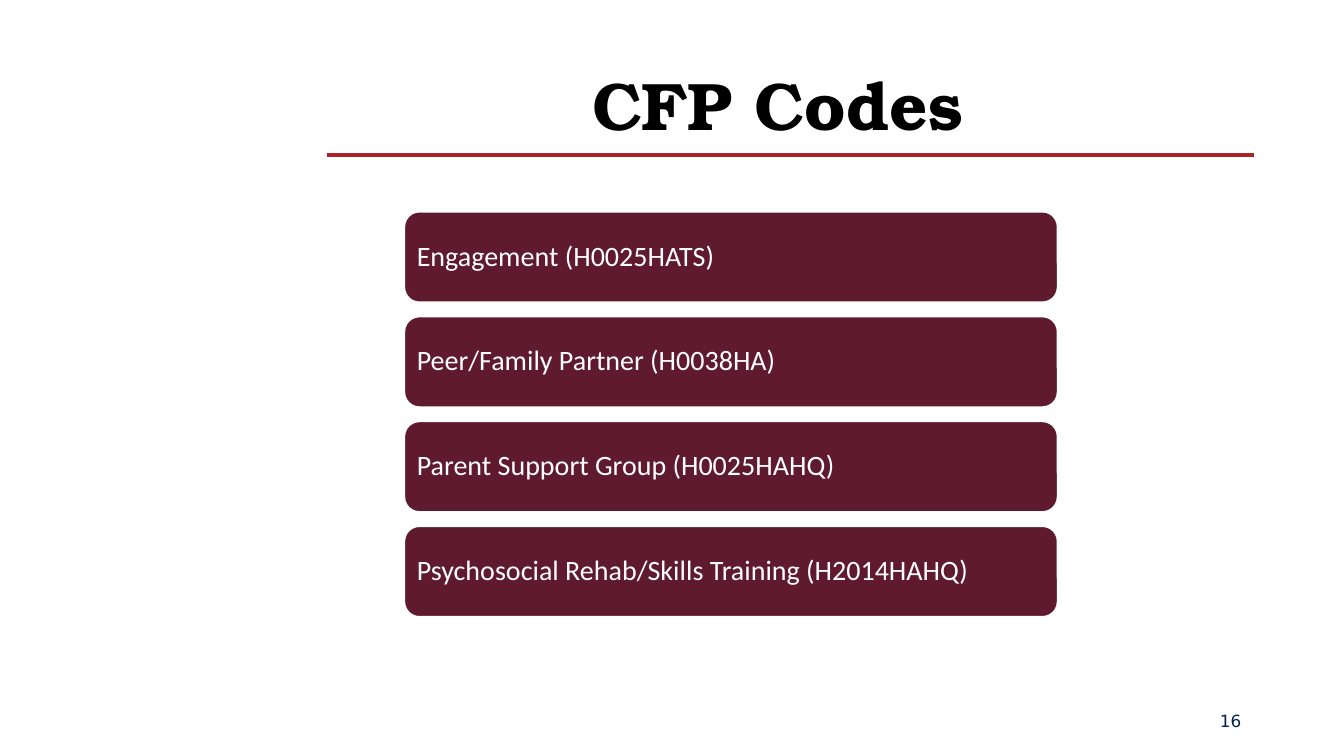
from pptx import Presentation
from pptx.dml.color import RGBColor
from pptx.enum.shapes import MSO_CONNECTOR, MSO_SHAPE
from pptx.enum.text import MSO_ANCHOR, PP_ALIGN
from pptx.oxml.ns import qn
from pptx.util import Inches, Pt
from lxml import etree

STRAIGHT = MSO_CONNECTOR.STRAIGHT
ROUNDED = MSO_SHAPE.ROUNDED_RECTANGLE
LEFT, CENTER, RIGHT = PP_ALIGN.LEFT, PP_ALIGN.CENTER, PP_ALIGN.RIGHT
MIDDLE, BOTTOM = MSO_ANCHOR.MIDDLE, MSO_ANCHOR.BOTTOM


def color(hex_code):
    return RGBColor.from_string(hex_code)


def write(box, text, font, size, fill, align=LEFT, anchor=MIDDLE, bold=False,
          spacing=1.0, after=0):
    frame = box.text_frame
    frame.word_wrap = True
    frame.vertical_anchor = anchor
    para = frame.paragraphs[0]
    para.alignment = align
    para.line_spacing = spacing
    para.space_after = Pt(after)
    span = para.add_run()
    span.text = text
    span.font.name = font
    span.font.size = Pt(size)
    span.font.bold = bold
    span.font.color.rgb = color(fill)


deck = Presentation()
deck.slide_width, deck.slide_height = Inches(13.33), Inches(7.5)
page = deck.slides.add_slide(deck.slide_layouts[6])
shapes = page.shapes

# Title and rule
rule = shapes.add_connector(STRAIGHT, Inches(3.24), Inches(1.54), Inches(12.44), Inches(1.54))
rule.line.color.rgb = color("AB2328")
rule.line.width = Pt(3)
etree.SubElement(rule._element.spPr, qn("a:effectLst"))

title = shapes.add_textbox(Inches(3.24), Inches(0.67), Inches(9.17), Inches(0.81))
write(title, "CFP Codes ", "TeX Gyre Bonum", 48, "000000",
      align=CENTER, anchor=BOTTOM, bold=True)

# Service codes
CODES = [
    "Engagement (H0025HATS)",
    "Peer/Family Partner (H0038HA)",
    "Parent Support Group (H0025HAHQ)",
    "Psychosocial Rehab/Skills Training (H2014HAHQ)",
]
FIRST_TOP, ROW_PITCH = 2.1, 1.04
for row, code in enumerate(CODES):
    bar = shapes.add_shape(ROUNDED, Inches(4.01), Inches(FIRST_TOP + row * ROW_PITCH),
                           Inches(6.48), Inches(0.9))
    bar.shadow.inherit = False
    bar.fill.solid()
    bar.fill.fore_color.rgb = color("5F1A2F")
    bar.line.color.rgb = color("FFFFFF")
    bar.line.width = Pt(1.25)
    bar.text_frame.margin_left = bar.text_frame.margin_right = Inches(0.08)
    write(bar, code, "Calibri", 20, "FFFFFF", spacing=0.9, after=7)

# Page number
number = shapes.add_textbox(Inches(10.17), Inches(6.95), Inches(2.24), Inches(0.4))
write(number, "16", "DejaVu Sans", 12, "022151", align=RIGHT, after=6)

deck.save("out.pptx")
